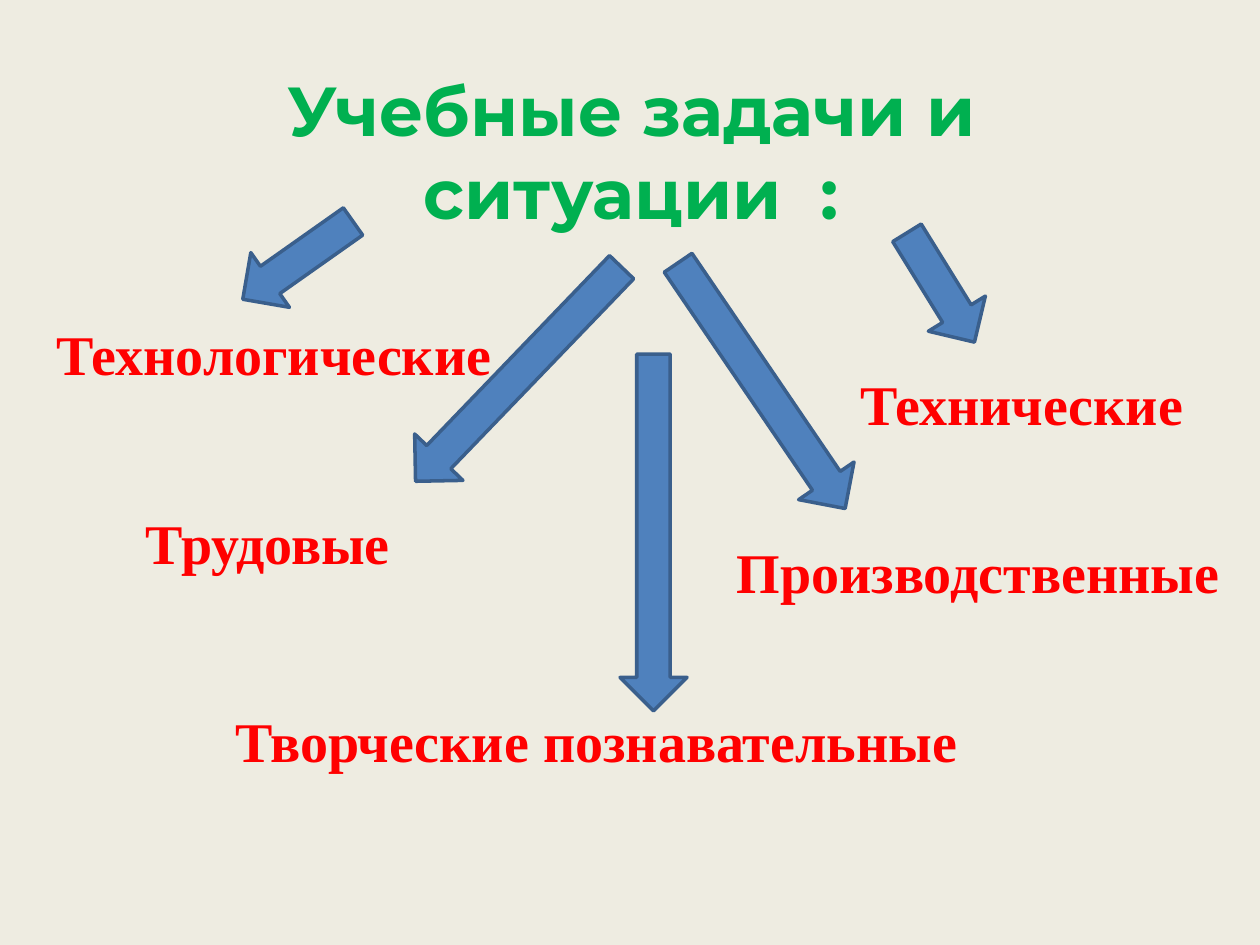
from pptx import Presentation
from pptx.dml.color import RGBColor
from pptx.enum.shapes import MSO_SHAPE
from pptx.enum.text import MSO_ANCHOR, PP_ALIGN
from pptx.util import Cm, Pt

ARROW = MSO_SHAPE.DOWN_ARROW
MIDDLE, TOP = MSO_ANCHOR.MIDDLE, MSO_ANCHOR.TOP
CENTER, LEFT = PP_ALIGN.CENTER, PP_ALIGN.LEFT

CREAM = RGBColor(0xEE, 0xEC, 0xE1)
GREEN = RGBColor(0x00, 0xB0, 0x50)
RED = RGBColor(0xFF, 0x00, 0x00)
BLUE = RGBColor(0x4F, 0x81, 0xBD)
NAVY = RGBColor(0x3A, 0x5F, 0x8C)

LABEL_HEIGHT = 1.62
ARROW_WIDTH = 1.35

# Text, left, top, width in cm
LABELS = [
    ("Технические", 17.09, 7.32, 7.39),
    ("Технологические", 0.89, 6.32, 9.96),
    ("Трудовые", 2.69, 10.13, 6.05),
    ("Производственные", 14.6, 10.72, 10.31),
    ("Творческие познавательные", 4.5, 14.12, 15.8),
]

# Left, top, length in cm, then turn in degrees
ARROWS = [
    (9.78, 4.55, 5.99, 43.9),
    (12.5, 7.14, 7.19, 0),
    (5.33, 3.89, 2.72, 54.8),
    (18.29, 4.5, 2.59, 328.3),
    (14.68, 4.78, 5.99, 325.8),
]


def add_text(slide, text, box, font, size, color, align=LEFT, anchor=TOP):
    frame = slide.shapes.add_textbox(*map(Cm, box)).text_frame
    frame.word_wrap = True
    frame.vertical_anchor = anchor
    para = frame.paragraphs[0]
    para.text = text
    para.alignment = align
    para.font.name = font
    para.font.size = Pt(size)
    para.font.bold = True
    para.font.color.rgb = color
    return para


def add_label(slide, text, left, top, width):
    box = (left, top, width, LABEL_HEIGHT)
    para = add_text(slide, text, box, "Times New Roman", 32, RED)
    para.space_before = Pt(5)


def add_arrow(slide, left, top, length, turn):
    box = (left, top, ARROW_WIDTH, length)
    arrow = slide.shapes.add_shape(ARROW, *map(Cm, box))
    arrow.rotation = turn
    arrow.shadow.inherit = False
    arrow.fill.solid()
    arrow.fill.fore_color.rgb = BLUE
    arrow.line.color.rgb = NAVY
    arrow.line.width = Pt(2)


def main():
    deck = Presentation()
    deck.slide_width, deck.slide_height = Cm(25.4), Cm(19.05)
    slide = deck.slides.add_slide(deck.slide_layouts[6])
    slide.background.fill.solid()
    slide.background.fill.fore_color.rgb = CREAM

    # Title
    add_text(slide, "Учебные задачи и ситуации  :", (1.3, 0.74, 22.86, 4.57),
             "Montserrat", 39.6, GREEN, CENTER, MIDDLE)

    # Kinds of task
    for label in LABELS:
        add_label(slide, *label)

    # Arrows from the title to each kind
    for arrow in ARROWS:
        add_arrow(slide, *arrow)

    deck.save("out.pptx")


if __name__ == "__main__":
    main()
